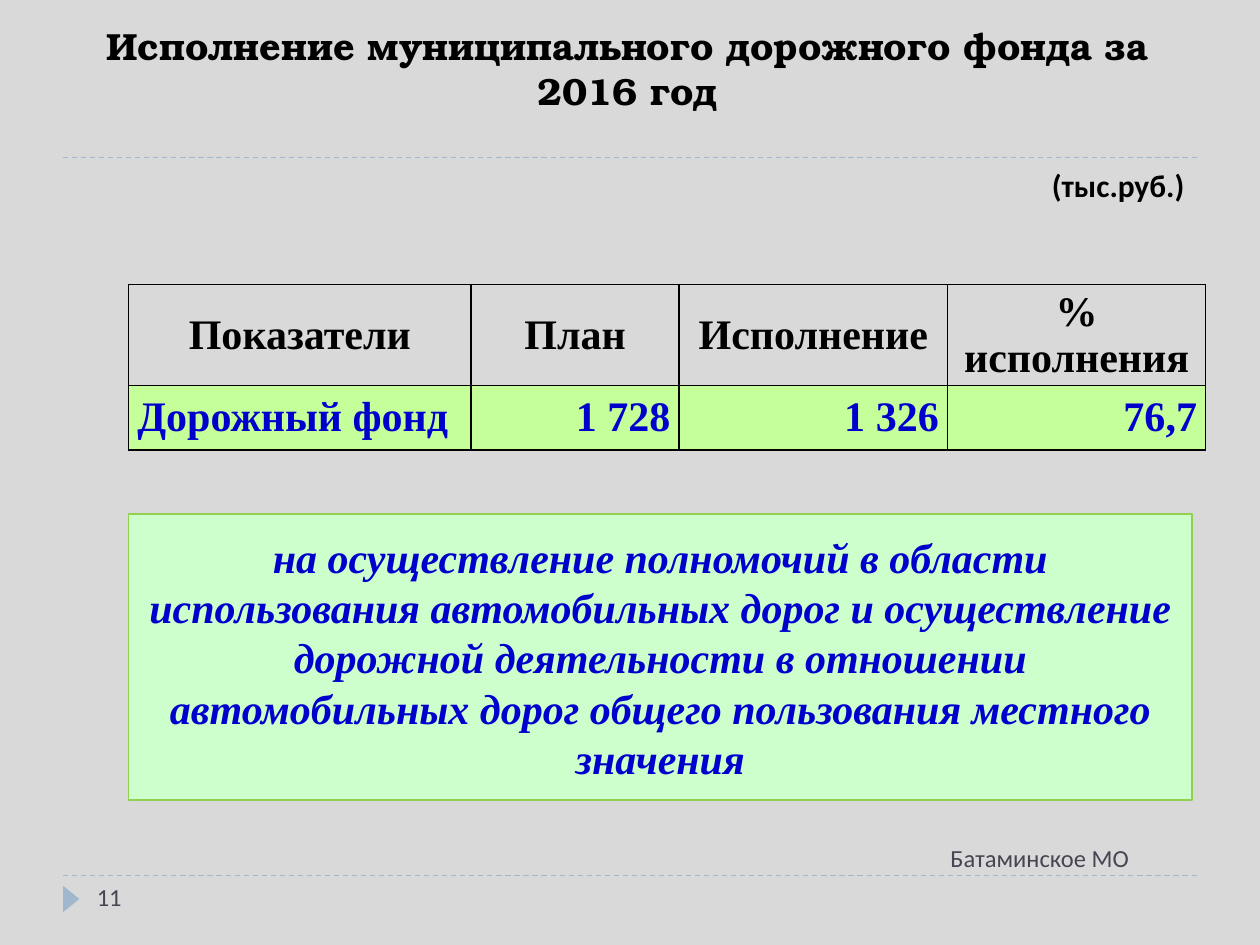
from dataclasses import dataclass

from lxml import etree
from pptx import Presentation
from pptx import util as u
from pptx.dml.color import RGBColor
from pptx.enum import dml, shapes, text
from pptx.oxml import ns

BLACK, BLUE, SLATE, ACCENT = "000000", "0000CC", "464653", "9FB8CD"
LEFT, CENTER, RIGHT = text.PP_ALIGN.LEFT, text.PP_ALIGN.CENTER, text.PP_ALIGN.RIGHT


@dataclass
class Style:
    font: str
    size: float
    color: str
    bold: bool = False
    italic: bool = False


@dataclass
class Label:
    words: str
    box: tuple
    style: Style
    align: text.PP_ALIGN = LEFT
    wrap: bool = True


@dataclass
class Row:
    cells: tuple
    aligns: tuple
    height: float
    style: Style
    fill: str | None = None


def rgb(value: str) -> RGBColor:
    return RGBColor.from_string(value)


def inches(box: tuple) -> list:
    return [u.Inches(length) for length in box]


def write(frame, words: str, style: Style, align: text.PP_ALIGN) -> None:
    frame.text = words
    paragraph = frame.paragraphs[0]
    paragraph.alignment = align
    font = paragraph.font
    font.name, font.size = style.font, u.Pt(style.size)
    font.bold, font.italic = style.bold, style.italic
    font.color.rgb = rgb(style.color)


def add_label(slide, label: Label) -> None:
    frame = slide.shapes.add_textbox(*inches(label.box)).text_frame
    frame.word_wrap = label.wrap
    write(frame, label.words, label.style, label.align)


def add_divider(slide, y: float) -> None:
    divider = slide.shapes.add_connector(
        shapes.MSO_CONNECTOR.STRAIGHT, *inches((0.5, y, 9.5, y)))
    divider.line.color.rgb = rgb(ACCENT)
    divider.line.width = u.Pt(0.75)
    divider.line.dash_style = dml.MSO_LINE.DASH
    etree.SubElement(divider._element.spPr, ns.qn("a:effectLst"))


def add_block(slide, kind, box: tuple, fill: str, outline: str | None = None):
    block = slide.shapes.add_shape(kind, *inches(box))
    block.shadow.inherit = False
    block.fill.solid()
    block.fill.fore_color.rgb = rgb(fill)
    if outline:
        block.line.color.rgb = rgb(outline)
        block.line.width = u.Pt(0.75)
    else:
        block.line.fill.background()
    return block


def add_borders(cell) -> None:
    properties = cell._tc.get_or_add_tcPr()
    for side in ("lnL", "lnR", "lnT", "lnB"):
        border = etree.SubElement(properties, ns.qn(f"a:{side}"), w=str(u.Pt(1)))
        solid = etree.SubElement(border, ns.qn("a:solidFill"))
        etree.SubElement(solid, ns.qn("a:srgbClr"), val=BLACK)


def add_budget(slide, left: float, top: float, widths: tuple, rows: list[Row]) -> None:
    height = sum(row.height for row in rows)
    budget = slide.shapes.add_table(
        len(rows), len(widths), *inches((left, top, sum(widths), height))).table
    for column, width in zip(budget.columns, widths):
        column.width = u.Inches(width)
    for r, row in enumerate(rows):
        budget.rows[r].height = u.Inches(row.height)
        for c, (words, align) in enumerate(zip(row.cells, row.aligns)):
            cell = budget.cell(r, c)
            cell.margin_left = cell.margin_right = u.Inches(0.07)
            cell.margin_top = cell.margin_bottom = 0
            cell.vertical_anchor = text.MSO_ANCHOR.MIDDLE
            add_borders(cell)
            if row.fill:
                cell.fill.solid()
                cell.fill.fore_color.rgb = rgb(row.fill)
            else:
                cell.fill.background()
            write(cell.text_frame, words, row.style, align)


def main() -> None:
    deck = Presentation()
    deck.slide_width, deck.slide_height = u.Inches(10), u.Inches(7.5)
    slide = deck.slides.add_slide(deck.slide_layouts[5])
    slide.background.fill.solid()
    slide.background.fill.fore_color.rgb = rgb("D9D9D9")

    for y in (6.95, 1.25):
        add_divider(slide, y)
    marker = add_block(slide, shapes.MSO_SHAPE.ISOSCELES_TRIANGLE,
                       (0.46, 7.07, 0.21, 0.13), ACCENT)
    marker.rotation = 90

    footer = Style("Calibri", 14, SLATE)
    unit = Style("Calibri", 18, BLACK, bold=True)
    for label in (
        Label("Батаминское МО", (6.56, 6.64, 2.5, 0.4), footer, RIGHT),
        Label("11", (0.67, 6.95, 2.17, 0.4), footer),
        Label("(тыс.руб.)", (8.25, 1.27, 1.32, 0.4), unit, wrap=False),
    ):
        add_label(slide, label)

    title = slide.shapes.title
    title.left, title.top, title.width, title.height = inches((0.48, 0.18, 9, 0.77))
    title.text_frame.auto_size = text.MSO_AUTO_SIZE.NONE
    title.text_frame.vertical_anchor = text.MSO_ANCHOR.BOTTOM
    write(title.text_frame, "Исполнение муниципального дорожного фонда за 2016 год",
          Style("TeX Gyre Bonum", 21.6, BLACK, bold=True), CENTER)

    add_budget(slide, 1.02, 2.26, (2.72, 1.65, 2.13, 2.05), [
        Row(("Показатели", "План", "Исполнение", "% исполнения"), (CENTER,) * 4,
            0.74, Style("Times New Roman", 24, BLACK, bold=True)),
        Row(("Дорожный фонд", "1 728", "1 326", "76,7"), (LEFT, RIGHT, RIGHT, RIGHT),
            0.51, Style("Times New Roman", 24, BLUE, bold=True), "C5FF99"),
    ])

    purpose = add_block(slide, shapes.MSO_SHAPE.RECTANGLE,
                        (1.02, 4.08, 8.44, 2.27), "CCFFCC", "92D050")
    purpose.text_frame.word_wrap = True
    purpose.text_frame.vertical_anchor = text.MSO_ANCHOR.MIDDLE
    write(purpose.text_frame,
          "на осуществление полномочий в области использования автомобильных дорог "
          "и осуществление дорожной деятельности в отношении автомобильных дорог "
          "общего пользования местного значения",
          Style("Times New Roman", 24, BLUE, bold=True, italic=True), CENTER)

    deck.save("out.pptx")


if __name__ == "__main__":
    main()
